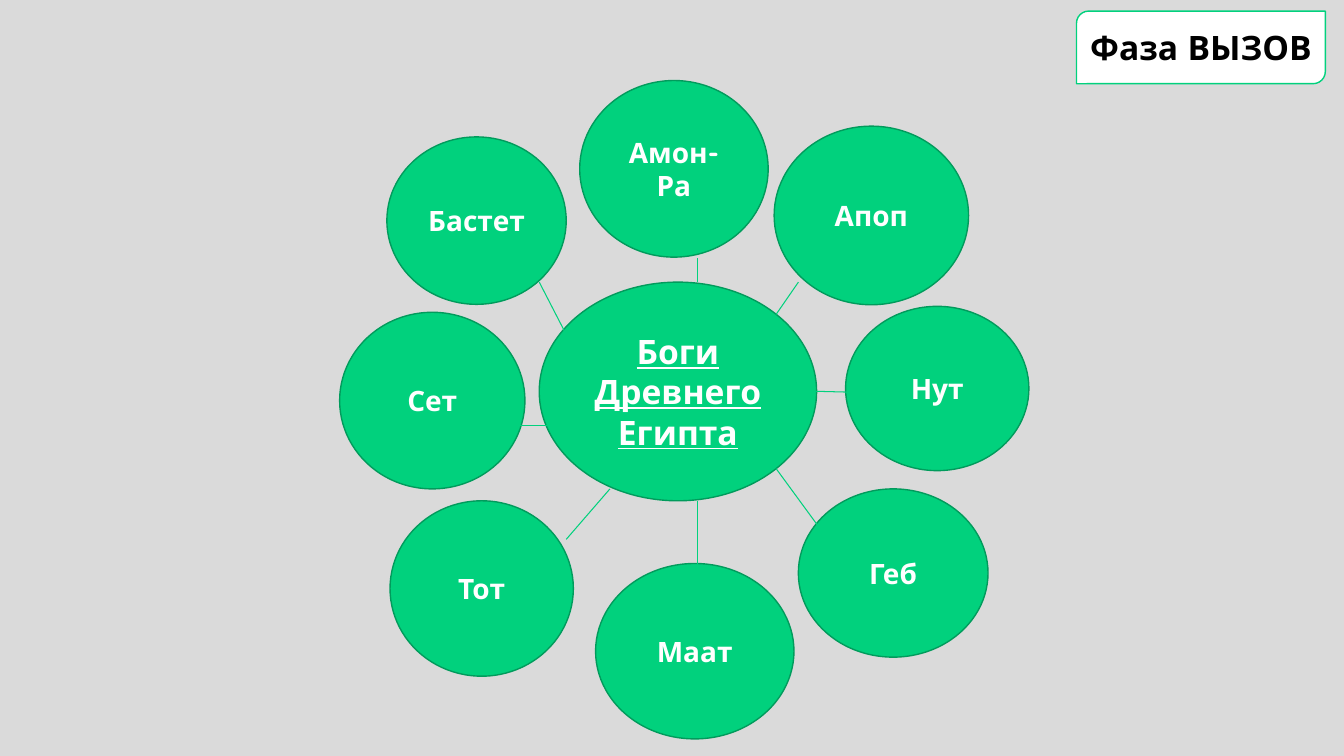
"""Build a cluster diagram of the gods of Ancient Egypt."""
from dataclasses import dataclass

from lxml import etree
from pptx import Presentation
from pptx.dml.color import RGBColor
from pptx.enum.shapes import MSO_CONNECTOR, MSO_SHAPE
from pptx.enum.text import MSO_ANCHOR, PP_ALIGN
from pptx.oxml.ns import qn
from pptx.util import Cm, Pt

OVAL = MSO_SHAPE.OVAL
BADGE = MSO_SHAPE.ROUND_2_DIAG_RECTANGLE
STRAIGHT = MSO_CONNECTOR.STRAIGHT
MIDDLE = MSO_ANCHOR.MIDDLE
CENTER = PP_ALIGN.CENTER

FONT = "Quicksand"
GREEN = "01D17D"
DARK_GREEN = "019B5C"
WHITE = "FFFFFF"
BLACK = "000000"
GREY = "DADADA"


@dataclass(frozen=True)
class Label:
    """A shape with a centred bold text, lengths in centimetres."""
    text: str
    left: float
    top: float
    width: float
    height: float
    size: int = 20
    underline: bool = False
    shape: MSO_SHAPE = OVAL
    fill: str = GREEN
    outline: str = DARK_GREEN
    ink: str = WHITE
    wrap: bool = True


@dataclass(frozen=True)
class Spoke:
    """A straight line between two points, in centimetres."""
    start_x: float
    start_y: float
    end_x: float
    end_y: float


TOPIC = Label("Боги Древнего Египта", 13.59, 7.11, 6.99, 5.51, size=24, underline=True)

GODS = [
    Label("Амон-Ра", 14.61, 2.03, 4.75, 4.45),
    Label("Маат", 15.01, 14.2, 5, 4.42),
    Label("Апоп", 19.51, 3.18, 4.9, 4.5),
    Label("Нут", 21.31, 7.72, 4.62, 4.14),
    Label("Геб", 20.12, 12.32, 4.78, 4.24),
    Label("Бастет", 9.75, 3.45, 4.52, 4.22),
    Label("Сет", 8.56, 7.87, 4.67, 4.45),
    Label("Тот", 9.83, 12.62, 4.62, 4.42),
]

SPOKES = [
    Spoke(17.58, 7.11, 17.58, 6.5),
    Spoke(19.56, 7.92, 20.12, 7.11),
    Spoke(20.57, 9.86, 22.53, 9.91),
    Spoke(19.56, 11.81, 21.31, 14.2),
    Spoke(17.58, 12.62, 17.58, 14.2),
    Spoke(15.37, 12.32, 14.27, 13.59),
    Spoke(13.97, 10.72, 12.85, 10.72),
    Spoke(14.27, 8.43, 13.59, 7.11),
]

PHASE = Label("Фаза ВЫЗОВ", 27.13, 0.28, 6.27, 1.83, size=24, shape=BADGE,
              fill=WHITE, outline=GREEN, ink=BLACK, wrap=False)


def color(value: str) -> RGBColor:
    """Turn a hex string into a colour."""
    return RGBColor.from_string(value)


def draw_label(page, label: Label) -> None:
    """Draw one labelled shape."""
    box = page.shapes.add_shape(label.shape, Cm(label.left), Cm(label.top),
                                Cm(label.width), Cm(label.height))
    box.shadow.inherit = False
    box.fill.solid()
    box.fill.fore_color.rgb = color(label.fill)
    box.line.color.rgb = color(label.outline)
    box.line.width = Pt(1)
    frame = box.text_frame
    frame.word_wrap = label.wrap
    frame.vertical_anchor = MIDDLE
    para = frame.paragraphs[0]
    para.alignment = CENTER
    span = para.add_run()
    span.text = label.text
    span.font.name = FONT
    span.font.size = Pt(label.size)
    span.font.bold = True
    span.font.underline = label.underline
    span.font.color.rgb = color(label.ink)


def draw_spoke(page, spoke: Spoke) -> None:
    """Draw one connecting line without a shadow."""
    line = page.shapes.add_connector(STRAIGHT, Cm(spoke.start_x), Cm(spoke.start_y),
                                     Cm(spoke.end_x), Cm(spoke.end_y))
    line.line.color.rgb = color(GREEN)
    line.line.width = Pt(0.75)
    etree.SubElement(line._element.spPr, qn("a:effectLst"))


def main() -> None:
    """Create the deck and save it."""
    deck = Presentation()
    deck.slide_width = Cm(33.87)
    deck.slide_height = Cm(19.05)
    page = deck.slides.add_slide(deck.slide_layouts[6])
    page.background.fill.solid()
    page.background.fill.fore_color.rgb = color(GREY)
    for label in [TOPIC, *GODS]:
        draw_label(page, label)
    for spoke in SPOKES:
        draw_spoke(page, spoke)
    draw_label(page, PHASE)
    deck.save("out.pptx")


if __name__ == "__main__":
    main()
